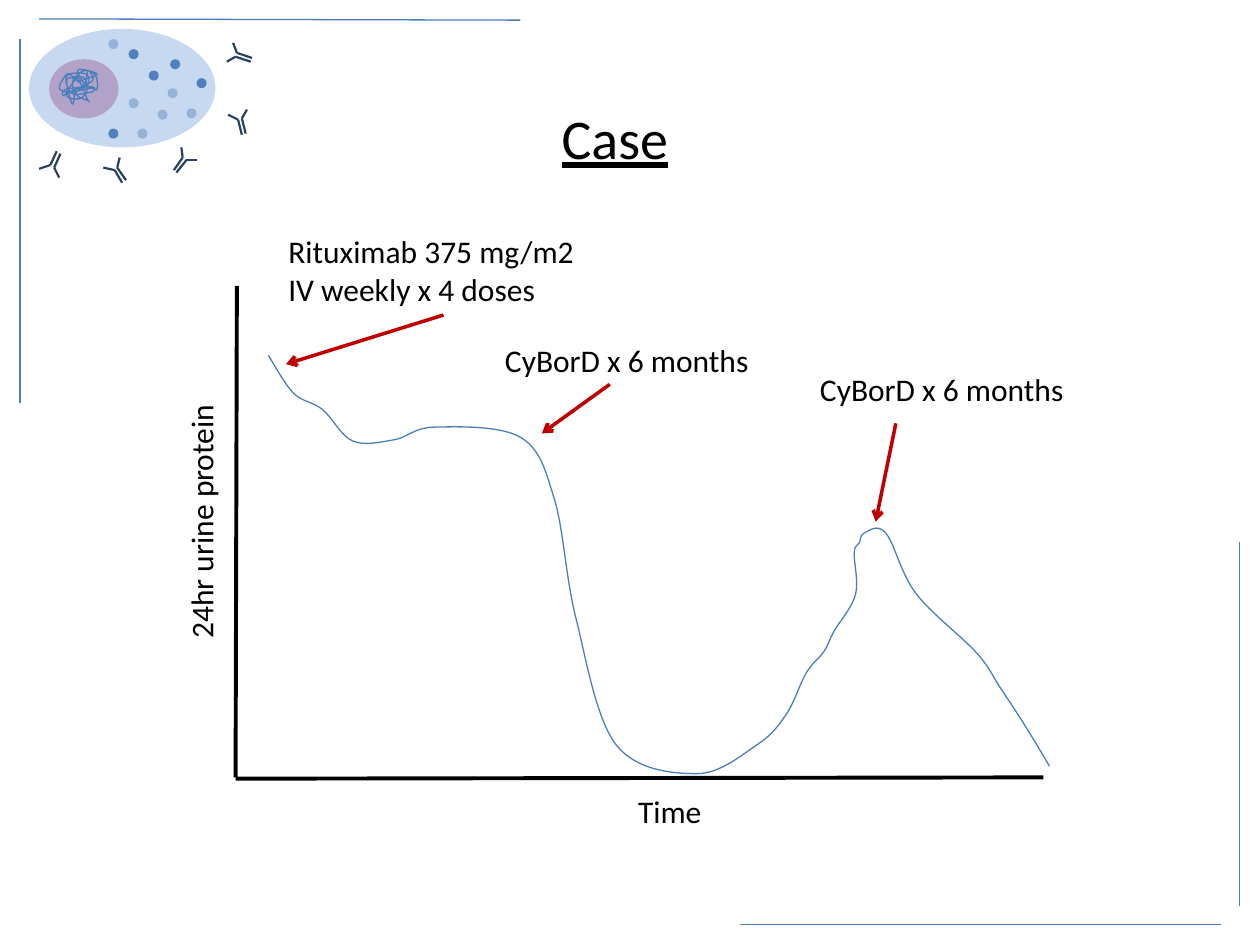
from itertools import pairwise

from pptx import Presentation
from pptx.dml.color import RGBColor
from pptx.enum import shapes, text
from pptx.oxml import ns
from pptx.util import Inches, Pt
from lxml import etree

COLORS = {
    "frame": "4B7EBC", "cell": "C6D9F1", "nucleus": "B3A2C7",
    "dark dot": "4F81BD", "light dot": "95B3D7", "antibody": "254061",
    "ink": "000000", "arrow": "C00000",
}


def add_line(start, end, color, width, arrow=False):
    line = page.shapes.add_connector(
        shapes.MSO_CONNECTOR.STRAIGHT, *map(Inches, start + end))
    line.line.color.rgb = RGBColor.from_string(COLORS[color])
    line.line.width = Pt(width)
    if arrow:
        etree.SubElement(line.line._get_or_add_ln(), ns.qn("a:tailEnd"), type="arrow")
    etree.SubElement(line._element.spPr, ns.qn("a:effectLst"))


def add_curve(anchors):
    """Draw a smooth open curve through the anchors, one Bezier per gap."""
    points = [(Inches(x), Inches(y)) for x, y in anchors]
    builder = page.shapes.build_freeform(*points[0])
    builder.add_line_segments(points[1:], close=False)
    curve = builder.convert_to_shape()
    padded = [(x - curve.left, y - curve.top)
              for x, y in [points[0], *points, points[-1]]]
    segments = list(curve._element.iter(ns.qn("a:lnTo")))
    for segment, a, b, c, d in zip(segments, padded, padded[1:], padded[2:], padded[3:]):
        bezier = etree.Element(ns.qn("a:cubicBezTo"))
        leave = [q + (r - p) / 6 for p, q, r in zip(a, b, c)]
        arrive = [r - (s - q) / 6 for q, r, s in zip(b, c, d)]
        for x, y in (leave, arrive, c):
            etree.SubElement(bezier, ns.qn("a:pt"), x=str(round(x)), y=str(round(y)))
        segment.getparent().replace(segment, bezier)
    curve.shadow.inherit = False
    curve.fill.background()
    curve.line.color.rgb = RGBColor.from_string(COLORS["frame"])
    curve.line.width = Pt(0.75)


deck = Presentation()
deck.slide_width, deck.slide_height = Inches(10), Inches(7.5)
page = deck.slides.add_slide(deck.slide_layouts[5])

# Title
title = page.shapes.title
title.left, title.top, title.width, title.height = map(Inches, (1.17, 0.77, 7.42, 0.64))
title.text_frame.text = "Case"
title.text_frame.vertical_anchor = text.MSO_ANCHOR.TOP
para = title.text_frame.paragraphs[0]
para.alignment = text.PP_ALIGN.CENTER
para.font.name, para.font.size, para.font.underline = "Calibri", Pt(32), True
para.font.color.rgb = RGBColor.from_string(COLORS["ink"])

# Corner frame lines
for start, end in [((9.84, 7.19), (9.84, 4.3)), ((9.69, 7.34), (5.87, 7.34)),
                   ((0.16, 0.31), (0.16, 3.2)), ((0.31, 0.15), (4.13, 0.16))]:
    add_line(start, end, "frame", 0.75)

# Plasma cell: body and nucleus
ovals = [((0.23, 0.23, 1.48, 0.94), "cell"), ((0.39, 0.47, 0.55, 0.47), "nucleus")]

# Granules
dark_dots = [(1.02, 0.39), (1.18, 0.56), (1.35, 0.47), (1.56, 0.62), (0.86, 1.02)]
light_dots = [(1.33, 0.7), (1.25, 0.87), (1.02, 0.78), (1.09, 1.02),
              (1.48, 0.86), (0.86, 0.31)]
ovals += [((*dot, 0.08, 0.08), "dark dot") for dot in dark_dots]
ovals += [((*dot, 0.08, 0.08), "light dot") for dot in light_dots]
for bounds, color in ovals:
    oval = page.shapes.add_shape(shapes.MSO_SHAPE.OVAL, *map(Inches, bounds))
    oval.shadow.inherit = False
    oval.fill.solid()
    oval.fill.fore_color.rgb = RGBColor.from_string(COLORS[color])
    oval.line.fill.background()

# Chromatin thread
add_curve([
    (0.61, 0.65), (0.77, 0.59), (0.63, 0.55), (0.63, 0.6), (0.69, 0.69), (0.69, 0.59),
    (0.53, 0.6), (0.57, 0.74), (0.73, 0.73), (0.73, 0.69), (0.52, 0.71), (0.51, 0.76),
    (0.61, 0.62), (0.65, 0.68), (0.68, 0.65), (0.7, 0.56), (0.74, 0.63), (0.67, 0.68),
    (0.54, 0.74), (0.55, 0.78), (0.64, 0.78), (0.69, 0.72), (0.67, 0.62), (0.58, 0.61),
    (0.53, 0.59), (0.47, 0.7), (0.56, 0.73), (0.72, 0.7), (0.77, 0.71), (0.76, 0.6),
    (0.67, 0.56), (0.58, 0.64), (0.59, 0.77), (0.57, 0.82), (0.53, 0.63), (0.63, 0.65),
    (0.69, 0.78), (0.71, 0.81), (0.7, 0.8), (0.65, 0.78), (0.64, 0.78), (0.6, 0.74),
    (0.65, 0.7), (0.67, 0.7)])

# Antibodies: each has two bent chains running tip, hinge, foot
antibody_chains = [
    [(0.31, 1.34), (0.4, 1.31), (0.45, 1.2)], [(0.47, 1.41), (0.43, 1.33), (0.48, 1.22)],
    [(0.82, 1.33), (0.91, 1.35), (0.97, 1.45)], [(0.95, 1.25), (0.93, 1.33), (1, 1.43)],
    [(1.44, 1.17), (1.45, 1.25), (1.38, 1.35)], [(1.56, 1.27), (1.48, 1.27), (1.4, 1.37)],
    [(1.81, 0.91), (1.89, 0.95), (1.92, 1.07)], [(1.96, 0.87), (1.92, 0.94), (1.95, 1.06)],
    [(1.8, 0.49), (1.87, 0.45), (1.99, 0.49)], [(1.85, 0.34), (1.88, 0.42), (2, 0.46)],
]
for chain in antibody_chains:
    for start, end in pairwise(chain):
        add_line(start, end, "antibody", 1.25)

# Urine protein over time
add_curve([
    (2.13, 2.82), (2.33, 3.12), (2.56, 3.25), (2.8, 3.5), (3.13, 3.49), (3.45, 3.39),
    (4.13, 3.47), (4.4, 3.96), (4.57, 4.9), (4.89, 5.91), (5.53, 6.14), (6.01, 5.91),
    (6.24, 5.67), (6.4, 5.34), (6.54, 5.17), (6.62, 5.01), (6.79, 4.72), (6.78, 4.4),
    (6.8, 4.33), (6.82, 4.31), (6.86, 4.23), (7.03, 4.23), (7.27, 4.71), (7.75, 5.18),
    (7.94, 5.46), (8.13, 5.75), (8.33, 6.08)])
add_line((1.88, 2.27), (1.87, 6.17), "ink", 2.25)
add_line((8.28, 6.17), (1.87, 6.18), "ink", 2.25)

# Axis titles and treatment labels
left, center = text.PP_ALIGN.LEFT, text.PP_ALIGN.CENTER
for label, bounds, align, rotation in [
    ("Time", (4.22, 6.24, 2.19, 0.4), center, 0),
    ("24hr urine protein", (0.5, 3.94, 2.19, 0.4), center, 270),
    ("Rituximab 375 mg/m2 IV weekly x 4 doses", (2.19, 1.79, 2.66, 0.71), left, 0),
    ("CyBorD x 6 months", (3.91, 2.66, 2.5, 0.4), left, 0),
    ("CyBorD x 6 months", (6.41, 2.89, 2.5, 0.4), left, 0),
]:
    box = page.shapes.add_textbox(*map(Inches, bounds))
    box.rotation = rotation
    box.text_frame.word_wrap = True
    para = box.text_frame.paragraphs[0]
    para.text, para.alignment = label, align
    para.font.name, para.font.size = "Calibri", Pt(18)
    para.font.color.rgb = RGBColor.from_string(COLORS["ink"])

# Treatment arrows
for start, end in [((3.52, 2.5), (2.27, 2.89)), ((4.84, 3.05), (4.3, 3.44)),
                   ((7.11, 3.36), (6.95, 4.14))]:
    add_line(start, end, "arrow", 2, arrow=True)

deck.save("out.pptx")
